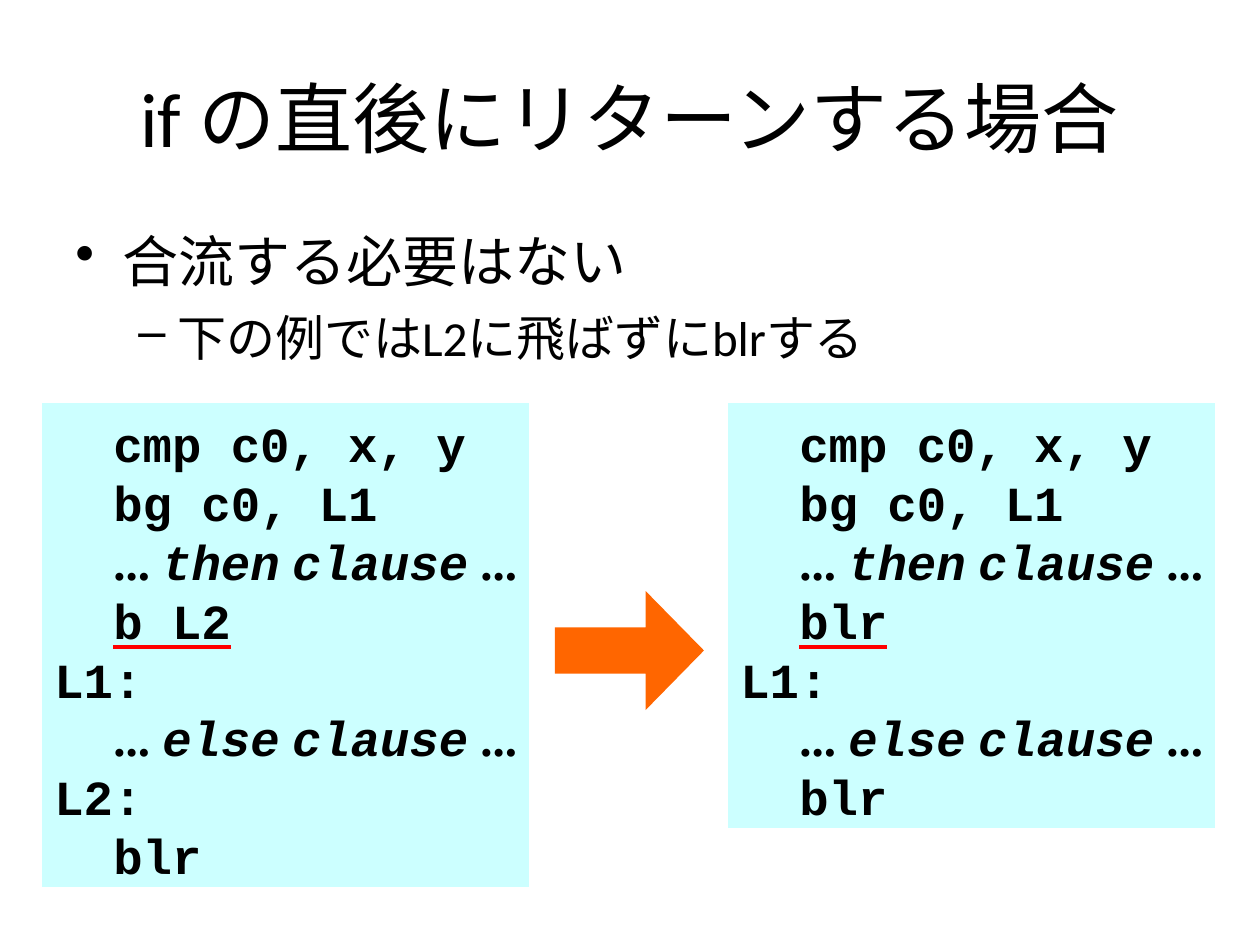
"""Build the slide on returning right after an if."""
import pptx
import pptx.util
import pptx.dml.color
import pptx.enum.shapes
import pptx.enum.text
import pptx.oxml
import pptx.oxml.ns

UNIT = 914400 / 126
HUES = {"ink": "000000", "code": "CCFFFF", "arrow": "FF6600", "mark": "FF0000"}
MONO, SERIF = "Courier New", "Times New Roman"
qn = pptx.oxml.ns.qn
align = pptx.enum.text.PP_ALIGN
kinds = pptx.enum.shapes.MSO_SHAPE


def px(*nums):
    return [round(n * UNIT) for n in nums]


def style(para, name, size, bold=False):
    font = para.font
    font.name, font.size, font.bold = name, pptx.util.Pt(size), bold
    font.color.rgb = pptx.dml.color.RGBColor.from_string(HUES["ink"])


deck = pptx.Presentation()
deck.slide_width, deck.slide_height = px(1260, 945)
slide = deck.slides.add_slide(deck.slide_layouts[5])

title = slide.shapes.title
title.left, title.top, title.width, title.height = px(63, 38, 1134, 158)
title.text_frame.text = "if の直後にリターンする場合"
title.text_frame.vertical_anchor = pptx.enum.text.MSO_ANCHOR.MIDDLE
head = title.text_frame.paragraphs[0]
head.alignment = align.CENTER
style(head, "Calibri", 44)

points = [
    ("合流する必要はない", 0, 32, "•", 47, 47),
    ("下の例ではL2に飛ばずにblrする", 1, 28, "–", 102, 39),
]
body = slide.shapes.add_textbox(*px(63, 220, 1134, 624)).text_frame
body.word_wrap = True
for i, (text, level, size, mark, left, hang) in enumerate(points):
    para = body.add_paragraph() if i else body.paragraphs[0]
    para.text, para.level = text, level
    para.space_before = pptx.util.Pt(8)
    style(para, "Calibri", size)
    props = para._p.get_or_add_pPr()
    left, hang = px(left, hang)
    props.set("marL", str(left))
    props.set("indent", str(-hang))
    bullet = pptx.oxml.parse_xml(
        f'<a:buChar {pptx.oxml.ns.nsdecls("a")} char="{mark}"/>')
    props.find(qn("a:defRPr")).addprevious(bullet)

start = ["  cmp c0, x, y", "  bg c0, L1", "  ... then clause ..."]
other = ["L1:", "  ... else clause ..."]
panels = [
    (42, 484, start + ["  _b L2"] + other + ["L2:", "  blr"]),
    (728, 425, start + ["  _blr"] + other + ["  blr"]),
]
for left, high, lines in panels:
    panel = slide.shapes.add_shape(kinds.RECTANGLE, *px(left, 403, 487, high))
    panel.shadow.inherit = False
    panel.fill.solid()
    panel.fill.fore_color.rgb = pptx.dml.color.RGBColor.from_string(HUES["code"])
    panel.line.fill.background()
    frame = panel.text_frame
    frame.word_wrap = False
    frame.vertical_anchor = pptx.enum.text.MSO_ANCHOR.TOP
    frame.margin_top, frame.margin_bottom = px(11, 0)
    for i, line in enumerate(lines):
        para = frame.add_paragraph() if i else frame.paragraphs[0]
        para.alignment = align.LEFT
        para.line_spacing = pptx.util.Pt(33.6)
        style(para, MONO, 28, True)
        if line.startswith("  "):
            para._p.get_or_add_pPr().set("marL", str(px(59)[0]))
        code = line.strip()
        if code.startswith("..."):
            dots, word, noun, end = code.split()
            parts = [(dots + " ", SERIF), (word, MONO), (" ", SERIF),
                     (noun, MONO), (" " + end, SERIF)]
        else:
            parts = [(code.lstrip("_"), MONO)]
        for text, name in parts:
            run = para.add_run()
            run.text = text
            run.font.name = name
            run.font.italic = len(parts) > 1 and name == MONO
            if code.startswith("_"):
                run.font.underline = True
                under = pptx.oxml.parse_xml(
                    f'<a:uFill {pptx.oxml.ns.nsdecls("a")}><a:solidFill>'
                    f'<a:srgbClr val="{HUES["mark"]}"/></a:solidFill></a:uFill>')
                run._r.rPr.find(qn("a:latin")).addprevious(under)

arrow = slide.shapes.add_shape(kinds.RIGHT_ARROW, *px(555, 591, 149, 119))
arrow.shadow.inherit = False
arrow.adjustments[0], arrow.adjustments[1] = 0.39, 0.49
arrow.fill.solid()
arrow.fill.fore_color.rgb = pptx.dml.color.RGBColor.from_string(HUES["arrow"])
arrow.line.fill.background()

deck.save("out.pptx")
